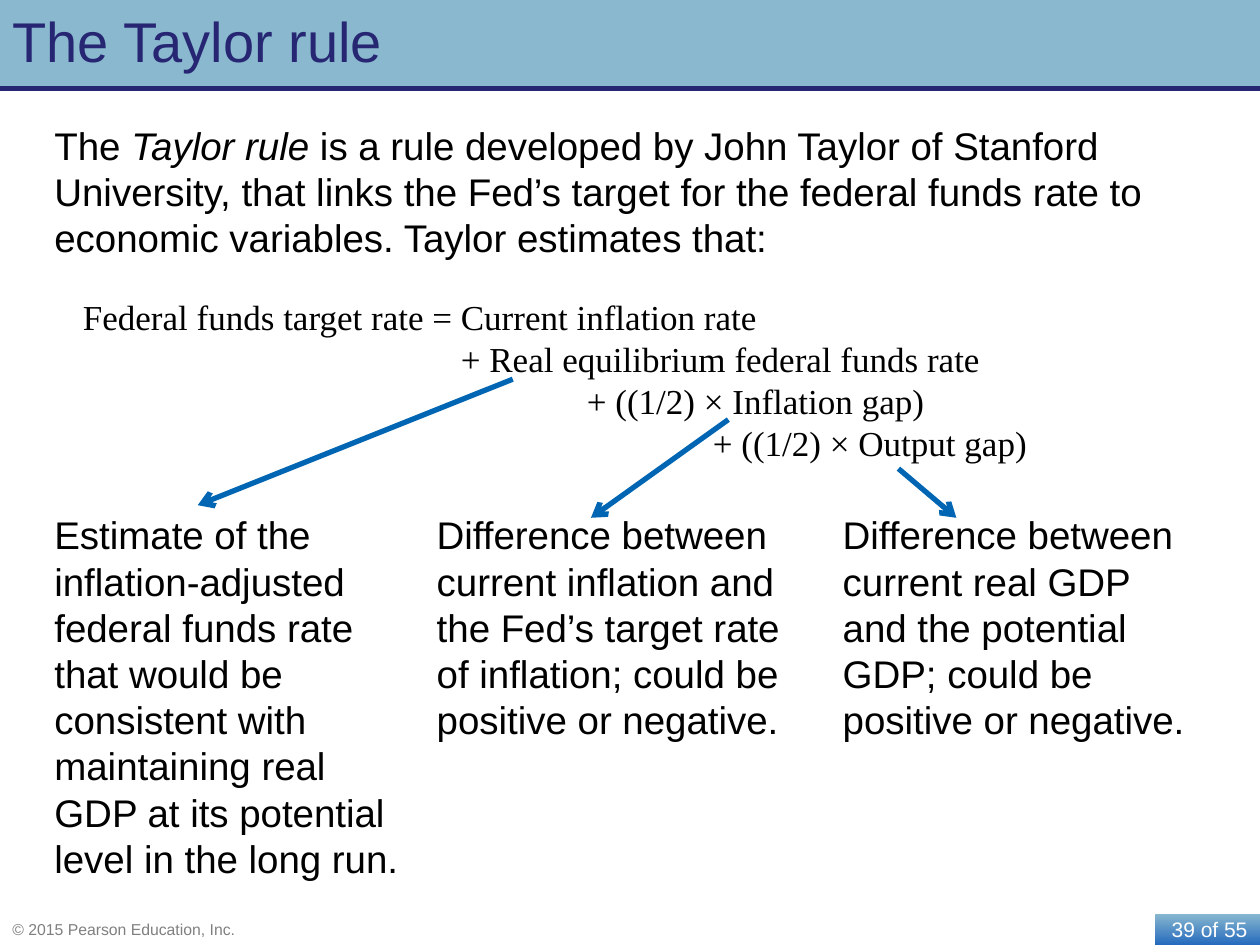
from lxml import etree
from pptx import Presentation
from pptx.dml.color import RGBColor
from pptx.enum.shapes import MSO_CONNECTOR, MSO_SHAPE
from pptx.enum.text import MSO_ANCHOR, MSO_AUTO_SIZE, PP_ALIGN
from pptx.oxml.ns import qn
from pptx.util import Pt

STRAIGHT = MSO_CONNECTOR.STRAIGHT
RECTANGLE = MSO_SHAPE.RECTANGLE
TOP, MIDDLE = MSO_ANCHOR.TOP, MSO_ANCHOR.MIDDLE
LEFT, RIGHT = PP_ALIGN.LEFT, PP_ALIGN.RIGHT
FIXED, GROW = MSO_AUTO_SIZE.NONE, MSO_AUTO_SIZE.SHAPE_TO_FIT_TEXT

WIDTH, HEIGHT, BAND_HEIGHT = 720, 540, 50.4
NAVY, SKY, BLUE, ARROW_BLUE = "262673", "89B8CF", "256ABD", "0066B3"
BLACK, GREY, WHITE = "000000", "808080", "FFFFFF"
LINE_FACTOR = 1.2
EQUATION_INDENT, TAB_WIDTH = 216, 72

TITLE = "The Taylor rule"
INTRO = [
    ("The ", False),
    ("Taylor rule", True),
    (" is a rule developed by John Taylor of Stanford University, that links the Fed’s "
     "target for the federal funds rate to economic variables. Taylor estimates that:", False),
]
EQUATION = [
    "Federal funds target rate = Current inflation rate",
    "+ Real equilibrium federal funds rate",
    "+ ((1/2) × Inflation gap)",
    "+ ((1/2) × Output gap)",
]
EXPLANATIONS = [
    (24, 220, "Estimate of the inflation-adjusted federal funds rate that would be consistent "
              "with maintaining real GDP at its potential level in the long run.",
     (293, 216.7), (113, 288.7)),
    (242.5, 179, "Difference between current inflation and the Fed’s target rate of inflation; "
                 "could be positive or negative.",
     (416.2, 239.8), (337.7, 295.9)),
    (474.5, 179, "Difference between current real GDP and the potential GDP; could be positive "
                 "or negative.",
     (513.4, 267.8), (546.5, 295.9)),
]
COPYRIGHT = "© 2015 Pearson Education, Inc."
PAGE = "39 of 55"


def color(hex_value):
    return RGBColor.from_string(hex_value)


def set_font(paragraph, size, hex_value, name="Arial"):
    paragraph.font.size = Pt(size)
    paragraph.font.name = name
    paragraph.font.color.rgb = color(hex_value)


def add_rectangle(slide, *box):
    shape = slide.shapes.add_shape(RECTANGLE, *map(Pt, box))
    shape.shadow.inherit = False
    shape.line.fill.background()
    return shape


def add_text_frame(slide, box, anchor=TOP, auto_size=GROW):
    frame = slide.shapes.add_textbox(*map(Pt, box)).text_frame
    frame.word_wrap = True
    frame.auto_size = auto_size
    frame.vertical_anchor = anchor
    return frame


def add_body_text(slide, box, runs):
    paragraph = add_text_frame(slide, box).paragraphs[0]
    for text, italic in runs:
        run = paragraph.add_run()
        run.text = text
        if italic:
            run.font.italic = True
    set_font(paragraph, 22, BLACK)
    paragraph.line_spacing = Pt(22 * LINE_FACTOR)
    paragraph.space_after = Pt(12)


def add_line(slide, start, end, hex_value, arrow=False):
    connector = slide.shapes.add_connector(STRAIGHT, *map(Pt, start + end))
    connector.line.color.rgb = color(hex_value)
    connector.line.width = Pt(3)
    properties = connector.element.spPr
    if arrow:
        etree.SubElement(properties.find(qn("a:ln")), qn("a:tailEnd"), type="arrow")
    etree.SubElement(properties, qn("a:effectLst"))


def add_header(slide):
    title = slide.shapes.title
    title.left, title.top, title.width, title.height = map(Pt, (0, 0, WIDTH, BAND_HEIGHT))
    frame = title.text_frame
    frame.text = TITLE
    frame.auto_size = FIXED
    frame.vertical_anchor = TOP
    paragraph = frame.paragraphs[0]
    paragraph.alignment = LEFT
    set_font(paragraph, 32, NAVY)

    band = add_rectangle(slide, 0, 0, WIDTH, BAND_HEIGHT)
    band.fill.solid()
    band.fill.fore_color.rgb = color(SKY)
    title.element.addprevious(band.element)
    add_line(slide, (0, BAND_HEIGHT), (WIDTH, BAND_HEIGHT), NAVY)


def add_footer(slide):
    badge = add_rectangle(slide, 660.3, 522, 59.7, 18)
    badge.fill.gradient()
    badge.fill.gradient_angle = 270
    for stop, hex_value, position in zip(badge.fill.gradient_stops, (SKY, BLUE), (0, 1)):
        stop.color.rgb = color(hex_value)
        stop.position = position
    badge.text_frame.vertical_anchor = MIDDLE
    badge.text_frame.word_wrap = False
    paragraph = badge.text_frame.paragraphs[0]
    paragraph.text = PAGE
    paragraph.alignment = RIGHT
    set_font(paragraph, 12, WHITE)

    paragraph = add_text_frame(slide, (0, 521.5, 660, 18.5), MIDDLE, FIXED).paragraphs[0]
    paragraph.text = COPYRIGHT
    set_font(paragraph, 9, GREY)


def add_equation(slide):
    frame = add_text_frame(slide, (40.3, 164.9, 595.4, 104.4), MIDDLE)
    for level, text in enumerate(EQUATION):
        paragraph = frame.add_paragraph() if level else frame.paragraphs[0]
        paragraph.text = "\t" * level + text
        properties = paragraph._p.get_or_add_pPr()
        properties.set("marL", str(Pt(EQUATION_INDENT)))
        properties.set("indent", str(-Pt(EQUATION_INDENT)))
        properties.set("defTabSz", str(Pt(TAB_WIDTH)))
        set_font(paragraph, 20, BLACK, "Times New Roman")
        paragraph.line_spacing = Pt(20 * LINE_FACTOR)


def main():
    presentation = Presentation()
    presentation.slide_width, presentation.slide_height = Pt(WIDTH), Pt(HEIGHT)
    slide = presentation.slides.add_slide(presentation.slide_layouts.get_by_name("Title Only"))
    add_header(slide)
    add_footer(slide)
    add_body_text(slide, (24, 66.2, 670.3, 87), INTRO)
    add_equation(slide)
    for left, height, text, start, end in EXPLANATIONS:
        add_line(slide, start, end, ARROW_BLUE, arrow=True)
        add_body_text(slide, (left, 288.7, 220.3, height), [(text, False)])
    presentation.save("out.pptx")


if __name__ == "__main__":
    main()
